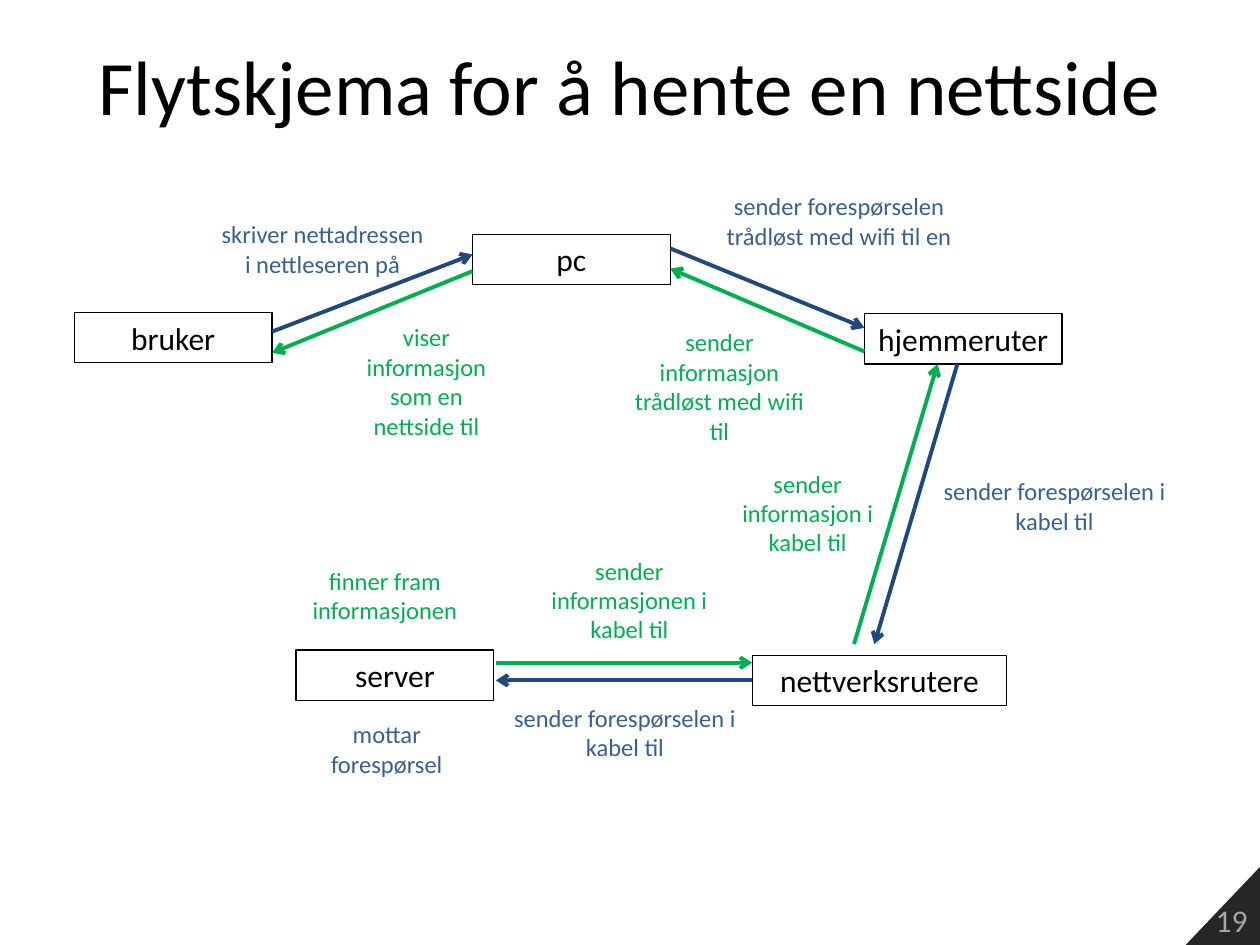
from lxml.etree import SubElement
from pptx import Presentation
from pptx.dml.color import RGBColor as RGB
from pptx.enum.shapes import MSO_CONNECTOR as CONNECTOR, MSO_SHAPE as SHAPE
from pptx.enum.text import MSO_ANCHOR as ANCHOR, PP_ALIGN as ALIGN
from pptx.oxml.ns import qn
from pptx.util import Inches, Pt

THEME = dict(
    font="Calibri", title_size=44, node_size=18, label_size=14,
    text=RGB(0, 0, 0), corner=RGB(0x26, 0x26, 0x26), number=RGB(0xA6, 0xA6, 0xA6),
    request=RGB(0x37, 0x60, 0x92), request_line=RGB(0x1F, 0x49, 0x7D),
    reply=RGB(0x00, 0xB0, 0x50), reply_line=RGB(0x00, 0xB0, 0x50),
    border=0.75, arrow=2.25,
)
COLS, ROWS = 100, 75  # square grid cells over the whole slide
NODE_H = 4

TITLE = ("Flytskjema for å hente en nettside", (5, 0.5, 90, 12.5))
PAGE = "19"
CORNER = [(94.1, 75), (100, 68.8), (100, 75)]

# name: left, top, width
NODES = {
    "bruker": (5.9, 24.8, 15.7),
    "pc": (37.5, 18.6, 15.7),
    "hjemmeruter": (68.6, 24.9, 15.7),
    "nettverksrutere": (59.7, 52, 20.2),
    "server": (23.5, 51.6, 15.7),
}

# kind, from, to; each end is a node with shares of its width and height
ARROWS = [
    ("request", ("bruker", 1, 0.38), ("pc", 0, 0.4)),
    ("request", ("pc", 1, 0.28), ("hjemmeruter", 0, 0.28)),
    ("request", ("hjemmeruter", 0.47, 1), ("nettverksrutere", 0.48, -0.22)),
    ("request", ("nettverksrutere", 0, 0.5), ("server", 1.01, 0.6)),
    ("reply", ("server", 1.01, 0.25), ("nettverksrutere", 0, 0.15)),
    ("reply", ("nettverksrutere", 0.4, -0.22), ("hjemmeruter", 0.37, 1)),
    ("reply", ("hjemmeruter", 0, 0.75), ("pc", 1, 0.68)),
    ("reply", ("pc", 0, 0.73), ("bruker", 1, 0.8)),
]

# kind, text, (left, top, width, height)
LABELS = [
    ("request", "skriver nettadressen i nettleseren på", (16.4, 16.9, 18.4, 5.7)),
    ("request", "sender forespørselen trådløst med wifi til en", (54.1, 14.7, 25, 5.7)),
    ("request", "sender forespørselen i kabel til", (72, 37.3, 23.4, 5.7)),
    ("request", "sender forespørselen i kabel til", (37.9, 55.3, 23.4, 5.7)),
    ("request", "mottar forespørsel", (24, 56.6, 13.4, 5.7)),
    ("reply", "finner fram informasjonen", (21.7, 44.4, 17.7, 5.7)),
    ("reply", "sender informasjonen i kabel til", (42.4, 43.6, 15.1, 8.1)),
    ("reply", "sender informasjon i\nkabel til", (56.2, 36.7, 15.8, 8.1)),
    ("reply", "sender informasjon trådløst med wifi til", (49.2, 25.5, 15.8, 10.4)),
    ("reply", "viser informasjon som en nettside til", (27.1, 25.1, 13.5, 10.4)),
]

prs = Presentation()
prs.slide_width, prs.slide_height = Inches(10), Inches(7.5)
slide = prs.slides.add_slide(prs.slide_layouts[6])
shapes = slide.shapes


def grid(x, y):
    return round(x * prs.slide_width / COLS), round(y * prs.slide_height / ROWS)


def frame(x, y, w, h):
    return *grid(x, y), *grid(w, h)


def write(sp, text, size, color, align=ALIGN.CENTER, anchor=ANCHOR.TOP):
    tf = sp.text_frame
    tf.text = text
    tf.word_wrap, tf.vertical_anchor = True, anchor
    for p in tf.paragraphs:
        p.alignment = align
        for r in p.runs:
            r.font.name, r.font.size = THEME["font"], Pt(size)
            r.font.color.rgb = color


def add_corner():
    points = [grid(*point) for point in CORNER]
    builder = shapes.build_freeform(*points[0])
    builder.add_line_segments(points[1:], close=True)
    sp = builder.convert_to_shape()
    sp.shadow.inherit = False
    sp.fill.solid()
    sp.fill.fore_color.rgb = THEME["corner"]
    sp.line.fill.background()
    write(sp, PAGE, THEME["node_size"], THEME["number"], ALIGN.RIGHT, ANCHOR.BOTTOM)


def add_text(text, box, size, color, anchor=ANCHOR.TOP):
    write(shapes.add_textbox(*frame(*box)), text, size, color, anchor=anchor)


def add_node(name, x, y, w):
    sp = shapes.add_shape(SHAPE.RECTANGLE, *frame(x, y, w, NODE_H))
    sp.shadow.inherit = False
    sp.fill.background()
    sp.line.color.rgb, sp.line.width = THEME["text"], Pt(THEME["border"])
    write(sp, name, THEME["node_size"], THEME["text"])


def anchor_point(name, share_x, share_y):
    x, y, w = NODES[name]
    return grid(x + share_x * w, y + share_y * NODE_H)


def add_arrow(kind, start, end):
    line = shapes.add_connector(
        CONNECTOR.STRAIGHT, *anchor_point(*start), *anchor_point(*end))
    line.line.color.rgb = THEME[kind + "_line"]
    line.line.width = Pt(THEME["arrow"])
    SubElement(line.line._get_or_add_ln(), qn("a:tailEnd"), type="arrow")
    SubElement(line._element.spPr, qn("a:effectLst"))


add_corner()
add_text(*TITLE, THEME["title_size"], THEME["text"], ANCHOR.MIDDLE)
for name, place in NODES.items():
    add_node(name, *place)
for arrow in ARROWS:
    add_arrow(*arrow)
for kind, text, box in LABELS:
    add_text(text, box, THEME["label_size"], THEME[kind])

prs.save("out.pptx")
